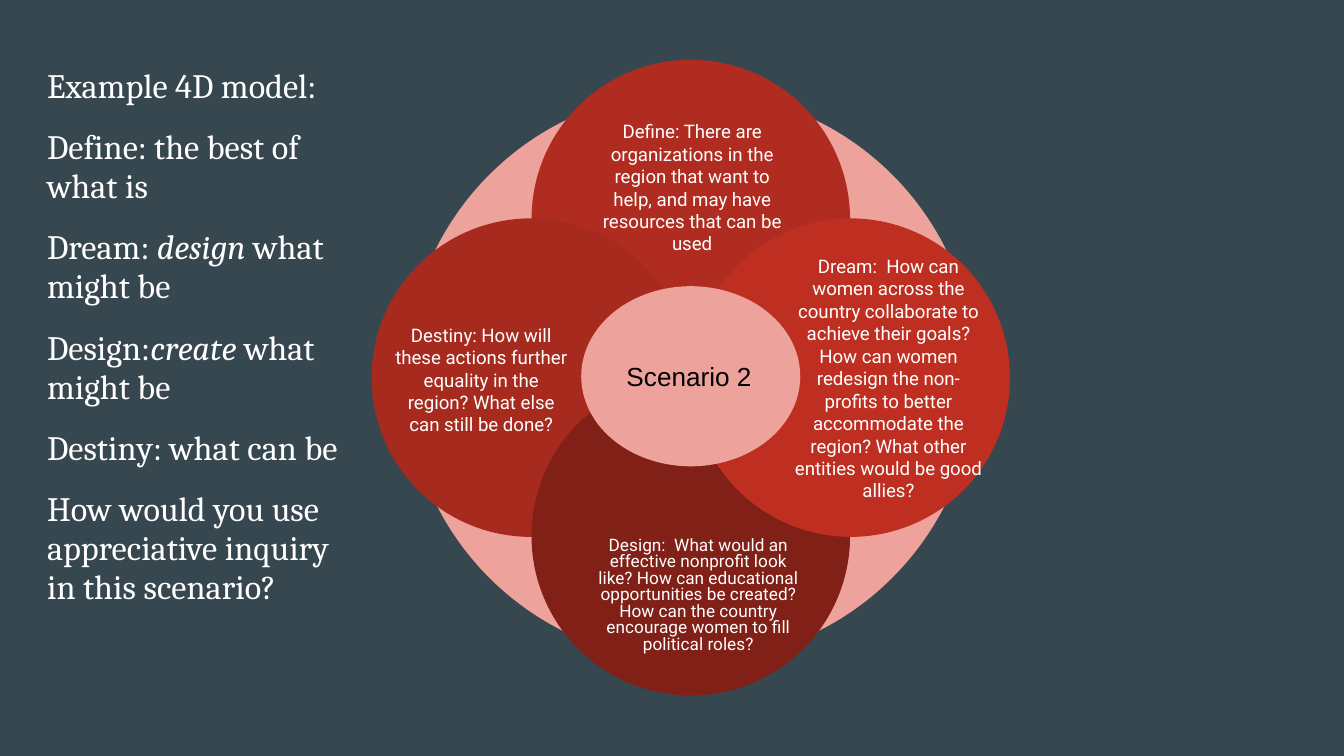
import pptx
import pptx.util
import pptx.dml.color
import pptx.enum.shapes
import pptx.enum.text
from lxml import etree

Inches = pptx.util.Inches
Pt = pptx.util.Pt
ALIGN = pptx.enum.text.PP_ALIGN
ANCHOR = pptx.enum.text.MSO_ANCHOR

WHITE = "FFFFFF"
PINK = "EDA29B"
BACKGROUND = "37474F"


def color(hex_value):
    return pptx.dml.color.RGBColor.from_string(hex_value)


class SlideBuilder:
    """Holds the slide and the style shared by its elements."""

    inset = Inches(0.1)

    def __init__(self, slide):
        self.slide = slide

    def background(self, fill):
        self.slide.background.fill.solid()
        self.slide.background.fill.fore_color.rgb = color(fill)

    def frame(self, shape, anchor):
        text_frame = shape.text_frame
        text_frame.word_wrap = True
        text_frame.auto_size = pptx.enum.text.MSO_AUTO_SIZE.NONE
        text_frame.vertical_anchor = anchor
        text_frame.margin_left = text_frame.margin_right = self.inset
        text_frame.margin_top = text_frame.margin_bottom = self.inset
        return text_frame

    def format_run(self, run, font, size, fill):
        run.font.name = font
        run.font.size = Pt(size)
        run.font.color.rgb = color(fill)

    def body(self, left, top, width, height, paragraphs):
        placeholder = self.slide.placeholders[1]
        placeholder.left, placeholder.top = Inches(left), Inches(top)
        placeholder.width, placeholder.height = Inches(width), Inches(height)
        text_frame = self.frame(placeholder, ANCHOR.TOP)
        for index, parts in enumerate(paragraphs):
            paragraph = text_frame.add_paragraph() if index else text_frame.paragraphs[0]
            properties = paragraph._p.get_or_add_pPr()
            properties.set("marL", "0")
            properties.set("indent", "0")
            etree.SubElement(properties, pptx.oxml.ns.qn("a:buNone"))
            paragraph.line_spacing = 0.95
            paragraph.space_before = Pt(12 if index else 0)
            for part_index, part in enumerate(parts):
                run = paragraph.add_run()
                run.text = part
                self.format_run(run, "Cambria", 18.3, WHITE)
                # Every second part is emphasised
                run.font.italic = part_index % 2 == 1
        paragraph.space_after = Pt(12)

    def ellipse(self, center_x, center_y, width, height, fill, parent=None):
        shape = (parent or self.slide).shapes.add_shape(
            pptx.enum.shapes.MSO_SHAPE.OVAL,
            Inches(center_x - width / 2), Inches(center_y - height / 2),
            Inches(width), Inches(height))
        shape.shadow.inherit = False
        shape.fill.solid()
        shape.fill.fore_color.rgb = color(fill)
        shape.line.fill.background()
        return shape

    def label(self, shape, text, font, size, fill, align, spacing=1.0):
        text_frame = self.frame(shape, ANCHOR.MIDDLE)
        text_frame.text = text
        paragraph = text_frame.paragraphs[0]
        paragraph.alignment = align
        paragraph.line_spacing = spacing
        self.format_run(paragraph.runs[0], font, size, fill)

    def petal(self, center_x, center_y, diameter, fill, box, text, size, spacing):
        group = self.slide.shapes.add_group_shape()
        self.ellipse(center_x, center_y, diameter, diameter, fill, group)
        text_box = group.shapes.add_textbox(*(Inches(value) for value in box))
        self.label(text_box, text, "Roboto", size, WHITE, ALIGN.CENTER, spacing)


def main():
    presentation = pptx.Presentation()
    # Widescreen, 16:9
    presentation.slide_width = Inches(10)
    presentation.slide_height = Inches(10 * 9 / 16)
    slide = presentation.slides.add_slide(presentation.slide_layouts[1])
    title = slide.shapes.title
    title.element.getparent().remove(title.element)
    builder = SlideBuilder(slide)
    builder.background(BACKGROUND)

    # Model summary on the left
    builder.body(0.25, 0.4, 2.37, 4.8, [
        ["Example 4D model:"],
        ["Define: the best of what is"],
        ["Dream: ", "design", " what might be"],
        ["Design:", "create ", "what might be"],
        ["Destiny: what can be"],
        ["How would you use appreciative inquiry in this scenario?"],
    ])

    # Ring behind the petals
    center_x, center_y = 5.14, 2.8
    builder.ellipse(center_x, center_y, 4.24, 4.24, PINK)

    # Petals: direction, fill, text box, text, size, line spacing
    petals = [
        ((0, -1), "B02C20", (4.33, 1.01, 1.64, 0.77),
         "Define: There are organizations in the region that want to help, "
         "and may have resources that can be used", 10, 1.0),
        ((-1, 0), "A72A1E", (2.84, 2.44, 1.48, 0.77),
         "Destiny: How will these actions further equality in the region? "
         "What else can still be done?", 10, 1.0),
        ((0, 1), "802017", (4.32, 3.87, 1.75, 1.13),
         "Design:  What would an effective nonprofit look like? How can "
         "educational opportunities be created? How can the country encourage "
         "women to fill political roles?", 9.2, 0.8),
        ((1, 0), "BE2F22", (5.79, 2.43, 1.64, 0.77),
         "Dream:  How can women across the country collaborate to achieve their "
         "goals? How can women redesign the non-profits to better accommodate "
         "the region? What other entities would be good allies?", 10, 1.0),
    ]
    petal_center_y = 2.81
    offset_x, offset_y = 1.19, 1.18
    for (step_x, step_y), fill, box, text, size, spacing in petals:
        builder.petal(center_x + step_x * offset_x,
                      petal_center_y + step_y * offset_y,
                      2.37, fill, box, text, size, spacing)

    # Scenario hub in the middle
    hub = builder.ellipse(center_x, center_y, 1.63, 1.34, PINK)
    builder.label(hub, "Scenario 2", "Arial", 14, "000000", ALIGN.LEFT)

    presentation.save("out.pptx")


if __name__ == "__main__":
    main()
